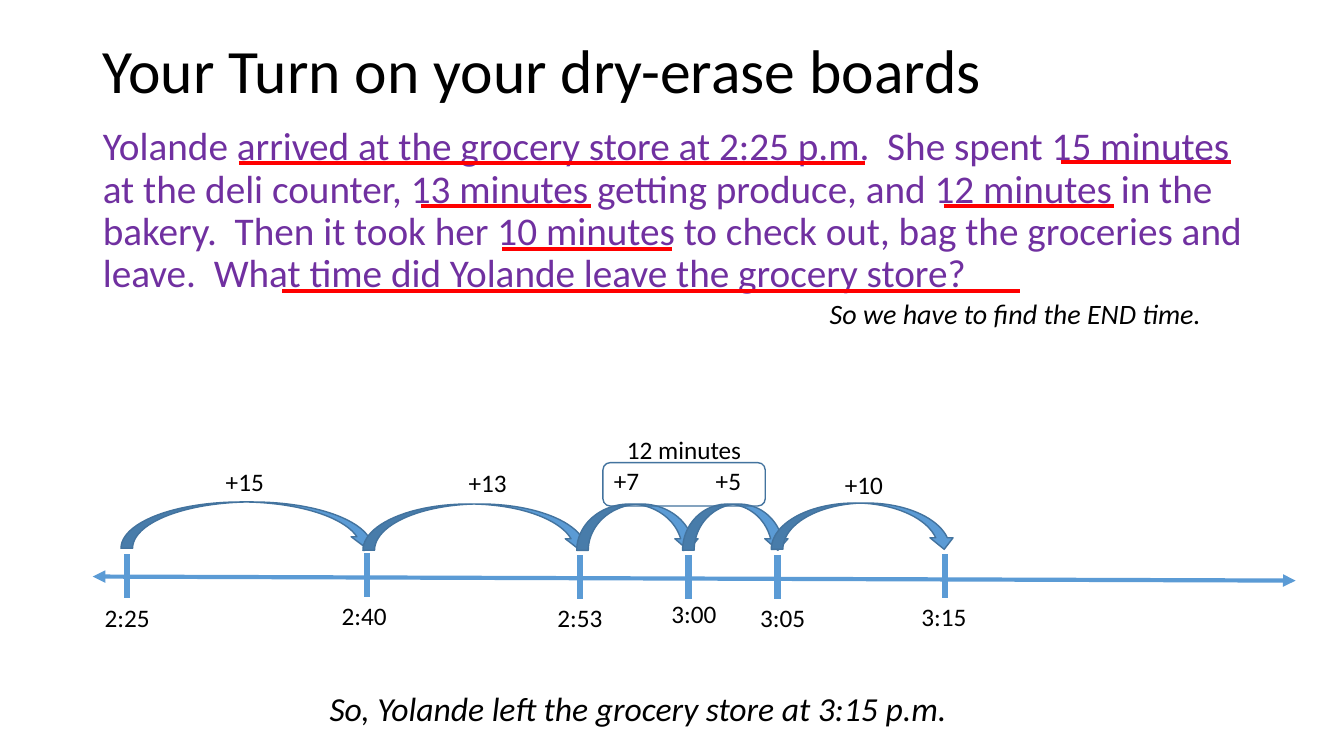
from dataclasses import dataclass

from pptx import Presentation
from pptx.dml.color import RGBColor
from pptx.enum.shapes import MSO_CONNECTOR, MSO_SHAPE
from pptx.enum.text import MSO_ANCHOR, MSO_AUTO_SIZE, PP_ALIGN
from pptx.oxml.ns import qn
from pptx.util import Inches, Pt
from lxml import etree

STRAIGHT = MSO_CONNECTOR.STRAIGHT
CURVED_ARROW = MSO_SHAPE.CURVED_DOWN_ARROW
ROUNDED = MSO_SHAPE.ROUNDED_RECTANGLE
LEFT = PP_ALIGN.LEFT
TOP, MIDDLE = MSO_ANCHOR.TOP, MSO_ANCHOR.MIDDLE
FIXED, GROW = MSO_AUTO_SIZE.NONE, MSO_AUTO_SIZE.SHAPE_TO_FIT_TEXT

FONT = "Calibri"
BLACK, PURPLE, RED = "000000", "7030A0", "FF0000"
BLUE, DARK_BLUE = "5B9BD5", "43739E"
TICK_HEIGHT = 0.43
LABEL_WIDTH, LABEL_HEIGHT = 0.89, 0.41
JUMP_HEIGHT = 0.46

TITLE = "Your Turn on your dry-erase boards"
PROBLEM = (
    "Yolande arrived at the grocery store at 2:25 p.m.  She spent 15 minutes "
    "at the deli counter, 13 minutes getting produce, and 12 minutes in the "
    "bakery.  Then it took her 10 minutes to check out, bag the groceries and "
    "leave.  What time did Yolande leave the grocery store?"
)


@dataclass
class Underline:
    left: float
    right: float
    y: float


@dataclass
class ClockTime:
    text: str
    x: float
    tick_top: float
    label_left: float
    label_top: float


@dataclass
class Jump:
    text: str
    left: float
    top: float
    width: float
    label_left: float
    label_top: float


@dataclass
class Note:
    text: str
    left: float
    top: float
    width: float
    height: float
    size: int = 18
    italic: bool = False


UNDERLINES = [
    Underline(2.37, 8.58, 1.62),
    Underline(10.52, 12.21, 1.61),
    Underline(4.18, 5.86, 2.04),
    Underline(9.36, 11.05, 2.04),
    Underline(4.98, 6.67, 2.47),
    Underline(2.8, 10.12, 2.89),
]
TIMES = [
    ClockTime("2:25", 1.26, 5.5, 0.94, 5.93),
    ClockTime("2:40", 3.64, 5.49, 3.29, 5.91),
    ClockTime("2:53", 5.75, 5.51, 5.43, 5.93),
    ClockTime("3:00", 6.83, 5.51, 6.56, 5.89),
    ClockTime("3:05", 7.71, 5.51, 7.44, 5.93),
    ClockTime("3:15", 9.37, 5.5, 9.04, 5.92),
]
JUMPS = [
    Jump("+15", 1.2, 4.98, 2.55, 2.14, 4.58),
    Jump("+13", 3.6, 5, 2.27, 4.55, 4.59),
    Jump("+7", 5.72, 5, 1.22, 5.99, 4.57),
    Jump("+5", 6.77, 5, 1.06, 7, 4.57),
    Jump("+10", 7.65, 4.99, 1.83, 8.28, 4.61),
]
NOTES = [
    Note("So we have to find the END time.", 8.13, 2.89, 4.29, 0.44, 20, True),
    Note("12 minutes", 6.12, 4.26, 1.42, 0.4),
    Note("So, Yolande left the grocery store at 3:15 p.m.",
         3.17, 6.78, 8.53, 0.5, 24, True),
]


def color(hex_value: str) -> RGBColor:
    return RGBColor.from_string(hex_value)


def apply(target, values: dict) -> None:
    for attribute, value in values.items():
        setattr(target, attribute, value)


def write(shape, text: str, size: int, hex_value: str,
          frame_format: dict, paragraph_format: dict, italic: bool = False) -> None:
    frame = shape.text_frame
    frame.text = text
    apply(frame, {"word_wrap": True, **frame_format})
    paragraph = frame.paragraphs[0]
    apply(paragraph, {"alignment": LEFT, **paragraph_format})
    font = paragraph.runs[0].font
    apply(font, {"name": FONT, "size": Pt(size), "italic": italic})
    font.color.rgb = color(hex_value)


def place(shape, left: float, top: float, width: float, height: float) -> None:
    apply(shape, {"left": Inches(left), "top": Inches(top),
                  "width": Inches(width), "height": Inches(height)})


def add_note(slide, note: Note) -> None:
    box = slide.shapes.add_textbox(Inches(note.left), Inches(note.top),
                                   Inches(note.width), Inches(note.height))
    write(box, note.text, note.size, BLACK, {"auto_size": GROW}, {}, note.italic)


def add_label(slide, text: str, left: float, top: float) -> None:
    add_note(slide, Note(text, left, top, LABEL_WIDTH, LABEL_HEIGHT))


def add_line(slide, x1: float, y1: float, x2: float, y2: float,
             hex_value: str, weight: float, arrows: bool = False) -> None:
    connector = slide.shapes.add_connector(
        STRAIGHT, Inches(x1), Inches(y1), Inches(x2), Inches(y2))
    connector.line.color.rgb = color(hex_value)
    connector.line.width = Pt(weight)
    if arrows:
        outline = connector.line._get_or_add_ln()
        for end in ("a:headEnd", "a:tailEnd"):
            etree.SubElement(outline, qn(end), type="triangle")
    etree.SubElement(connector._element.spPr, qn("a:effectLst"))


def add_outlined(slide, kind, left: float, top: float, width: float,
                 height: float, fill: str = ""):
    shape = slide.shapes.add_shape(kind, Inches(left), Inches(top),
                                   Inches(width), Inches(height))
    shape.shadow.inherit = False
    shape.line.color.rgb = color(DARK_BLUE)
    shape.line.width = Pt(1)
    if fill:
        shape.fill.solid()
        shape.fill.fore_color.rgb = color(fill)
    else:
        shape.fill.background()


def fill_placeholders(slide) -> None:
    title, problem = slide.placeholders
    place(title, 0.92, 0, 11.5, 1.45)
    write(title, TITLE, 44, BLACK,
          {"auto_size": FIXED, "vertical_anchor": MIDDLE}, {"line_spacing": 0.9})
    place(problem, 0.92, 1.21, 11.5, 5.55)
    write(problem, PROBLEM, 28, PURPLE,
          {"auto_size": FIXED, "vertical_anchor": TOP},
          {"line_spacing": 0.9, "space_before": Pt(10)})
    properties = problem.text_frame.paragraphs[0]._p.get_or_add_pPr()
    for indent in ("marL", "indent"):
        properties.set(indent, "0")
    etree.SubElement(properties, qn("a:buNone"))


def main() -> None:
    presentation = Presentation()
    apply(presentation, {"slide_width": Inches(13.33), "slide_height": Inches(7.5)})
    slide = presentation.slides.add_slide(presentation.slide_layouts[1])
    fill_placeholders(slide)
    for phrase in UNDERLINES:
        add_line(slide, phrase.left, phrase.y, phrase.right, phrase.y, RED, 3)
    add_line(slide, 0.92, 5.72, 12.85, 5.76, BLUE, 3, arrows=True)
    for time in TIMES:
        add_line(slide, time.x, time.tick_top, time.x, time.tick_top + TICK_HEIGHT,
                 BLUE, 4.5)
        add_label(slide, time.text, time.label_left, time.label_top)
    for jump in JUMPS:
        add_outlined(slide, CURVED_ARROW, jump.left, jump.top, jump.width,
                     JUMP_HEIGHT, BLUE)
        add_label(slide, jump.text, jump.label_left, jump.label_top)
    add_outlined(slide, ROUNDED, 5.98, 4.59, 1.61, 0.43)
    for note in NOTES:
        add_note(slide, note)
    presentation.save("out.pptx")


if __name__ == "__main__":
    main()
